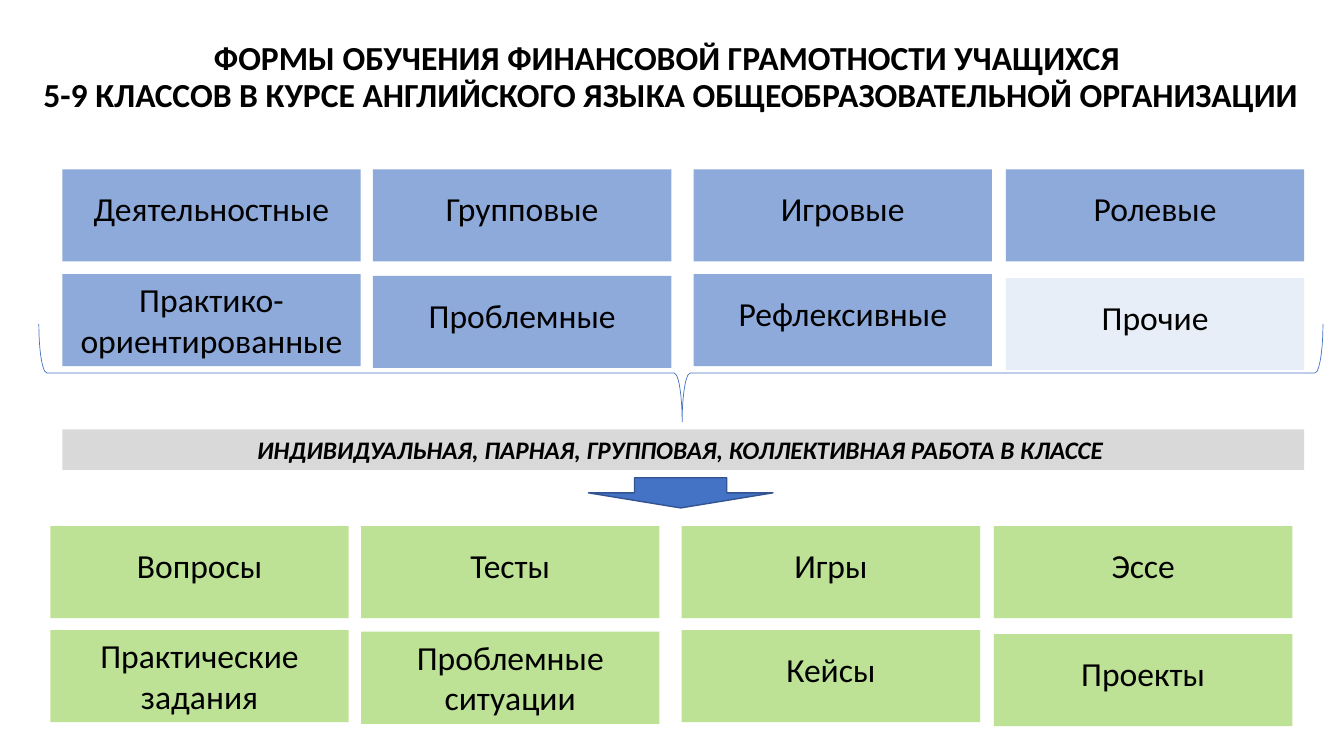
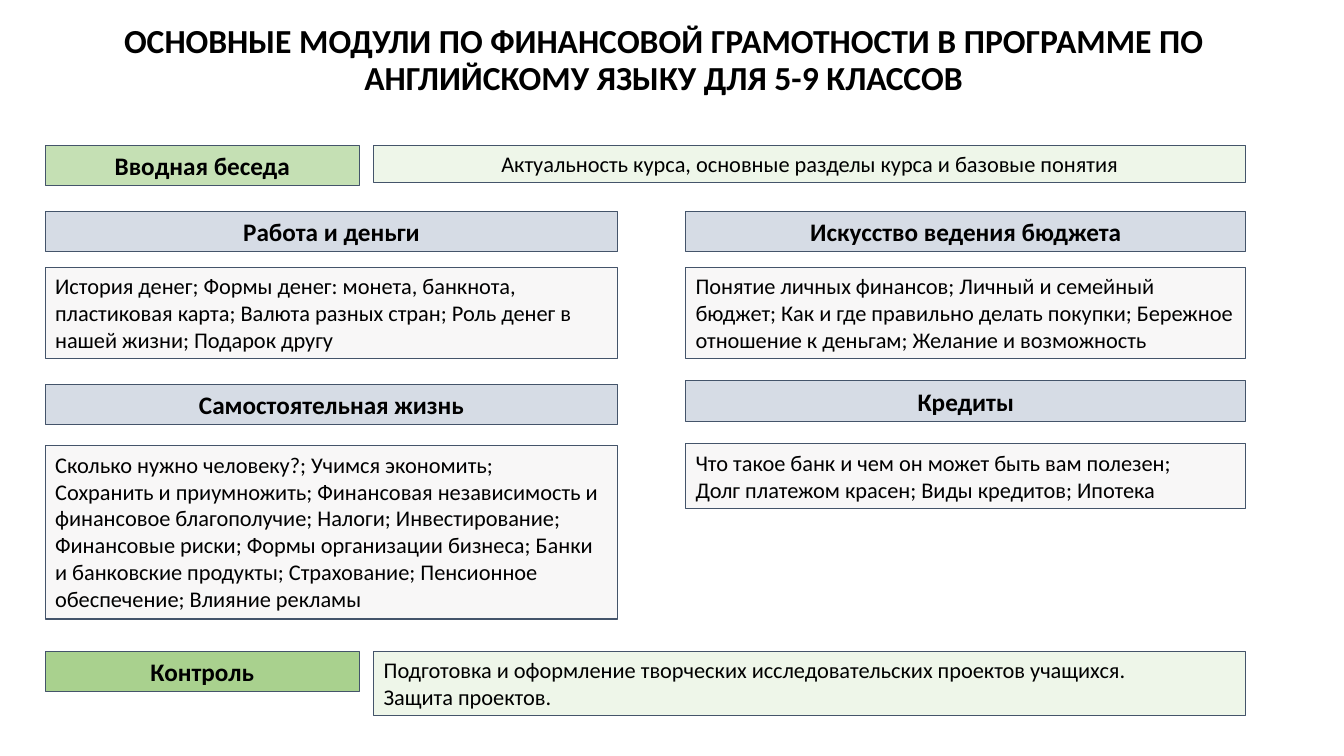
import pptx
import pptx.dml.color
import pptx.enum.shapes
import pptx.enum.text
import pptx.oxml
import pptx.oxml.ns
import pptx.util
from lxml import etree

Cm = pptx.util.Cm
Pt = pptx.util.Pt
SHAPES = pptx.enum.shapes.MSO_SHAPE
ALIGN = pptx.enum.text.PP_ALIGN
ANCHOR = pptx.enum.text.MSO_ANCHOR

COLOURS = {
    "text": "000000",
    "blue": "4472C4",
    "pale blue": "DAE3F3",
    "arrow edge": "325491",
    "lime": "92D050",
    "band": "D9D9D9",
    "edge": "44546A",
    "intro": "C5E0B4",
    "module": "D6DCE5",
    "topics": "E7E6E6",
    "control": "A9D18E",
}


class Slides:
    font = "Calibri"
    inset = 0.13
    lowered_inset = 0.47

    def __init__(self):
        self.deck = pptx.Presentation()
        self.deck.slide_width = Cm(33.87)
        self.deck.slide_height = Cm(19.05)
        self.page = None

    def colour(self, name):
        return pptx.dml.color.RGBColor.from_string(COLOURS[name])

    def add_text(self, frame, text, size, bold=False, italic=False, align=ALIGN.CENTER):
        """Fill the first paragraph, turning each newline into a line break."""
        para = frame.paragraphs[0]
        para.alignment = align
        for number, line in enumerate(text.split("\n")):
            if number:
                para.add_line_break()
            span = para.add_run()
            span.text = line
            span.font.name = self.font
            span.font.size = Pt(size)
            span.font.bold = bold
            span.font.italic = italic
            span.font.color.rgb = self.colour("text")
        return para

    def new_page(self, title, left, top):
        self.page = self.deck.slides.add_slide(self.deck.slide_layouts[5])
        holder = self.page.shapes.title
        holder.left, holder.top = Cm(left), Cm(top)
        holder.width, holder.height = Cm(32.33), Cm(3.08)
        frame = holder.text_frame
        frame.word_wrap = True
        frame.auto_size = pptx.enum.text.MSO_AUTO_SIZE.NONE
        frame.vertical_anchor = ANCHOR.MIDDLE
        self.add_text(frame, title, 24, bold=True).line_spacing = 0.9

    def shape(self, kind, left, top, width, height, fill=None, alpha=100,
              line=None, line_width=0.75):
        shape = self.page.shapes.add_shape(kind, Cm(left), Cm(top), Cm(width), Cm(height))
        shape.shadow.inherit = False
        if fill:
            shape.fill.solid()
            shape.fill.fore_color.rgb = self.colour(fill)
            if alpha < 100:
                tint = shape.element.spPr.find(".//" + pptx.oxml.ns.qn("a:srgbClr"))
                etree.SubElement(tint, pptx.oxml.ns.qn("a:alpha"), val=str(alpha * 1000))
        else:
            shape.fill.background()
        if line:
            shape.line.color.rgb = self.colour(line)
            shape.line.width = Pt(line_width)
        else:
            shape.line.fill.background()
        return shape

    def box(self, text, place, fill, size, alpha=100, line=None, lowered=False, **style):
        """Draw a rectangle with text; lowered starts the text further down."""
        box = self.shape(SHAPES.RECTANGLE, *place, fill, alpha, line)
        frame = box.text_frame
        frame.word_wrap = True
        frame.vertical_anchor = ANCHOR.TOP
        frame.margin_top = Cm(self.lowered_inset if lowered else self.inset)
        frame.margin_bottom = Cm(self.inset)
        self.add_text(frame, text, size, **style)

    def heading(self, text, left, top, width, fill):
        self.box(text, (left, top, width, 1.02), fill, 18, line="edge", bold=True)

    def details(self, text, place, fill, align=ALIGN.LEFT):
        self.box(text, place, fill, 16, alpha=29, line="edge", align=align)

    def tiles(self, rows, left, tops, fill, accents):
        """Draw rows of four tiles; the columns and lower row sit slightly unevenly."""
        columns = (0, 7.83, 15.91, 23.78)
        drops = ((0, 0, 0, 0), (0, 0.04, 0, 0.1))
        two_lines = ("Практико-\nориентированные", "Практические задания",
                     "Проблемные ситуации")
        for row, top, row_drops in zip(rows, tops, drops):
            for text, column, drop in zip(row, columns, row_drops):
                self.box(text, (left + column, top + drop, 7.52, 2.32),
                         accents.get(text, fill), 24, alpha=60,
                         lowered=text not in two_lines)

    def brace_below(self, left, top, width, height):
        """Draw a brace that opens upwards and points down."""
        brace = self.shape(SHAPES.LEFT_BRACE, left + (width - height) / 2,
                           top + (height - width) / 2, height, width,
                           line="blue", line_width=0.5)
        brace.rotation = 270
        brace.adjustments[0] = 0.083
        brace.adjustments[1] = 0.501


def forms_page(slides):
    slides.new_page(
        "ФОРМЫ ОБУЧЕНИЯ ФИНАНСОВОЙ ГРАМОТНОСТИ УЧАЩИХСЯ \n"
        "5-9 КЛАССОВ В КУРСЕ АНГЛИЙСКОГО ЯЗЫКА ОБЩЕОБРАЗОВАТЕЛЬНОЙ ОРГАНИЗАЦИИ",
        0.74, 0.43)
    forms = (("Деятельностные", "Групповые", "Игровые", "Ролевые"),
             ("Практико-\nориентированные", "Проблемные", "Рефлексивные", "Прочие"))
    slides.tiles(forms, 1.57, (4.27, 6.91), "blue", {"Прочие": "pale blue"})
    slides.box("ИНДИВИДУАЛЬНАЯ, ПАРНАЯ, ГРУППОВАЯ, КОЛЛЕКТИВНАЯ РАБОТА В КЛАССЕ ",
               (1.57, 10.82, 31.3, 1.02), "band", 18, bold=True, italic=True)
    slides.brace_below(0.98, 8.17, 32.36, 2.46)
    slides.shape(SHAPES.DOWN_ARROW, 14.83, 12.04, 4.65, 0.76, "blue",
                 line="arrow edge", line_width=1)
    tasks = (("Вопросы", "Тесты", "Игры", "Эссе"),
             ("Практические задания", "Проблемные ситуации", "Кейсы", "Проекты"))
    slides.tiles(tasks, 1.27, (13.26, 15.88), "lime", {})


def modules_page(slides):
    slides.new_page("ОСНОВНЫЕ МОДУЛИ ПО ФИНАНСОВОЙ ГРАМОТНОСТИ В ПРОГРАММЕ ПО "
                    "АНГЛИЙСКОМУ ЯЗЫКУ ДЛЯ 5-9 КЛАССОВ", 0.56, 0)
    left, right_edge = 1.14, 31.4
    stages = (
        ("Вводная беседа", "intro", 3.66, 0.94, ALIGN.CENTER,
         "Актуальность курса, основные разделы курса и базовые понятия"),
        ("Контроль", "control", 16.41, 1.63, ALIGN.LEFT,
         "Подготовка и оформление творческих исследовательских проектов учащихся. \n"
         "Защита проектов."),
    )
    for name, fill, top, height, align, text in stages:
        slides.heading(name, left, top, 7.92, fill)
        slides.details(text, (9.42, top, right_edge - 9.42, height), "intro", align)

    first, second = (left, 14.43), (17.28, right_edge - 17.28)
    modules = (
        ("Работа и деньги", first, 5.33, 6.73, 2.31,
         "История денег; Формы денег: монета, банкнота, пластиковая карта; "
         "Валюта разных стран; Роль денег в нашей жизни; Подарок другу"),
        ("Искусство ведения бюджета", second, 5.33, 6.73, 2.31,
         "Понятие личных финансов; Личный и семейный бюджет; Как и где правильно "
         "делать покупки; Бережное отношение к деньгам; Желание и возможность"),
        ("Самостоятельная жизнь", first, 9.68, 11.23, 4.37,
         "Сколько нужно человеку?; Учимся экономить; \n"
         "Сохранить и приумножить; Финансовая независимость и финансовое "
         "благополучие; Налоги; Инвестирование; Финансовые риски; Формы "
         "организации бизнеса; Банки и банковские продукты; Страхование; "
         "Пенсионное обеспечение; Влияние рекламы"),
        ("Кредиты", second, 9.6, 11.18, 1.63,
         "Что такое банк и чем он может быть вам полезен; \n"
         "Долг платежом красен; Виды кредитов; Ипотека"),
    )
    for name, (x, width), top, text_top, height, text in modules:
        slides.heading(name, x, top, width, "module")
        slides.details(text, (x, text_top, width, height), "topics")


def main():
    slides = Slides()
    forms_page(slides)
    modules_page(slides)
    slides.deck.save("out.pptx")


if __name__ == "__main__":
    main()
